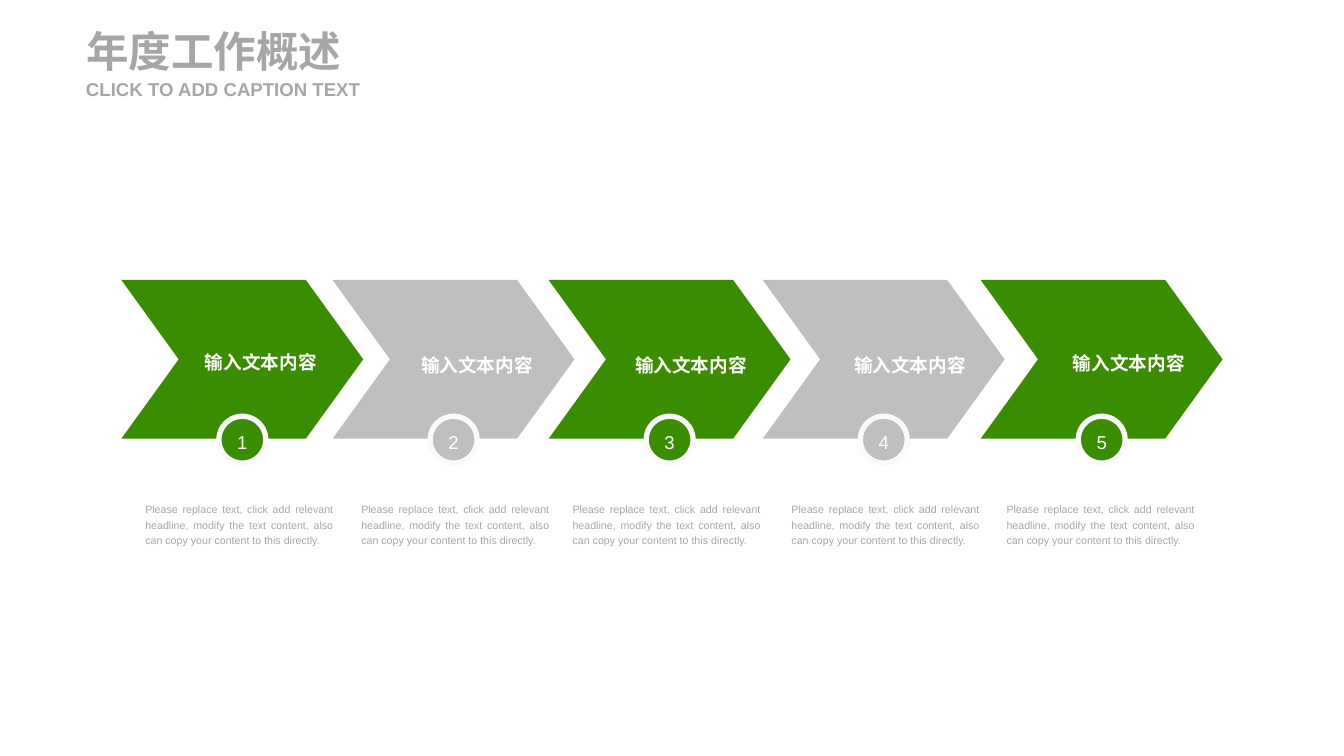
"""Build the annual work overview slide: five numbered chevrons with captions."""
from pptx import Presentation
from pptx.dml.color import RGBColor
from pptx.enum.shapes import MSO_SHAPE as Shape
from pptx.enum.text import MSO_ANCHOR as Anchor, MSO_AUTO_SIZE as Fit, PP_ALIGN as Align
from pptx.util import Inches, Pt

GREEN, SILVER, GRAY, WHITE, RIM = "3B8D00", "BFBFBF", "A6A6A6", "FFFFFF", "FBF9FC"
LABEL = "输入文本内容"
CAPTION = ("Please replace text, click add relevant headline, modify the text "
           "content, also can copy your content to this directly.")
WIDE, HIGH, TOP = 2.53, 1.66, 2.93
TIP, DISC = 0.6, 0.49
STEPS = [(1.27, 2.73, 3.77, 1.52), (3.48, 4.99, 3.8, 3.78), (5.74, 7.23, 3.8, 5.99),
         (7.98, 9.52, 3.8, 8.28), (10.26, 11.81, 3.78, 10.53)]

deck = Presentation()
deck.slide_width, deck.slide_height = Inches(14.06), Inches(7.91)
slide = deck.slides.add_slide(deck.slide_layouts[5])
shapes = slide.shapes


def write(box, text, size, color, align=Align.CENTER, bold=False, anchor=Anchor.MIDDLE, lead=1.2):
    frame = box.text_frame
    look = dict(margin_left=0, margin_right=0, margin_top=0, margin_bottom=0,
                word_wrap=True, auto_size=Fit.NONE, vertical_anchor=anchor)
    for key, value in look.items():
        setattr(frame, key, value)
    para = frame.paragraphs[0]
    para.text, para.alignment, para.line_spacing = text, align, lead
    font = para.runs[0].font
    for key, value in dict(name="Arial", size=Pt(size), bold=bold).items():
        setattr(font, key, value)
    font.color.rgb = RGBColor.from_string(color)


def draw(kind, left, top, wide, high, color):
    shape = shapes.add_shape(kind, *map(Inches, (left, top, wide, high)))
    shape.shadow.inherit = False
    shape.fill.solid()
    shape.fill.fore_color.rgb = RGBColor.from_string(color)
    shape.line.fill.background()
    return shape


title = shapes.title
title.left, title.top, title.width, title.height = map(Inches, (0.9, 0.26, 3.07, 0.54))
write(title, "年度工作概述", 32, GRAY, Align.LEFT, True, lead=1.0)
sub = shapes.add_textbox(*map(Inches, (0.9, 0.81, 3.07, 0.24)))
write(sub, "CLICK TO ADD CAPTION TEXT", 14, GRAY, Align.LEFT, True, lead=1.0)

for num, (left, mid, line, edge) in enumerate(STEPS, 1):
    color = GREEN if num % 2 else SILVER
    arrow = draw(Shape.CHEVRON, left, TOP, WIDE, HIGH, color)
    arrow.adjustments[0] = TIP / HIGH
    label = shapes.add_textbox(*map(Inches, (mid - 0.85, line - 0.13, 1.7, 0.26)))
    write(label, LABEL, 14, WHITE, bold=True)

    disc = draw(Shape.OVAL, left + (WIDE - DISC) / 2, TOP + HIGH + 0.01 - DISC / 2, DISC, DISC, color)
    disc.line.color.rgb = RGBColor.from_string(RIM)
    disc.line.width = Pt(4)
    write(disc, str(num), 14, WHITE)

    note = shapes.add_textbox(*map(Inches, (edge, 5.24, 1.97, 0.47)))
    write(note, CAPTION, 8, GRAY, Align.JUSTIFY, anchor=Anchor.TOP)

deck.save("out.pptx")
